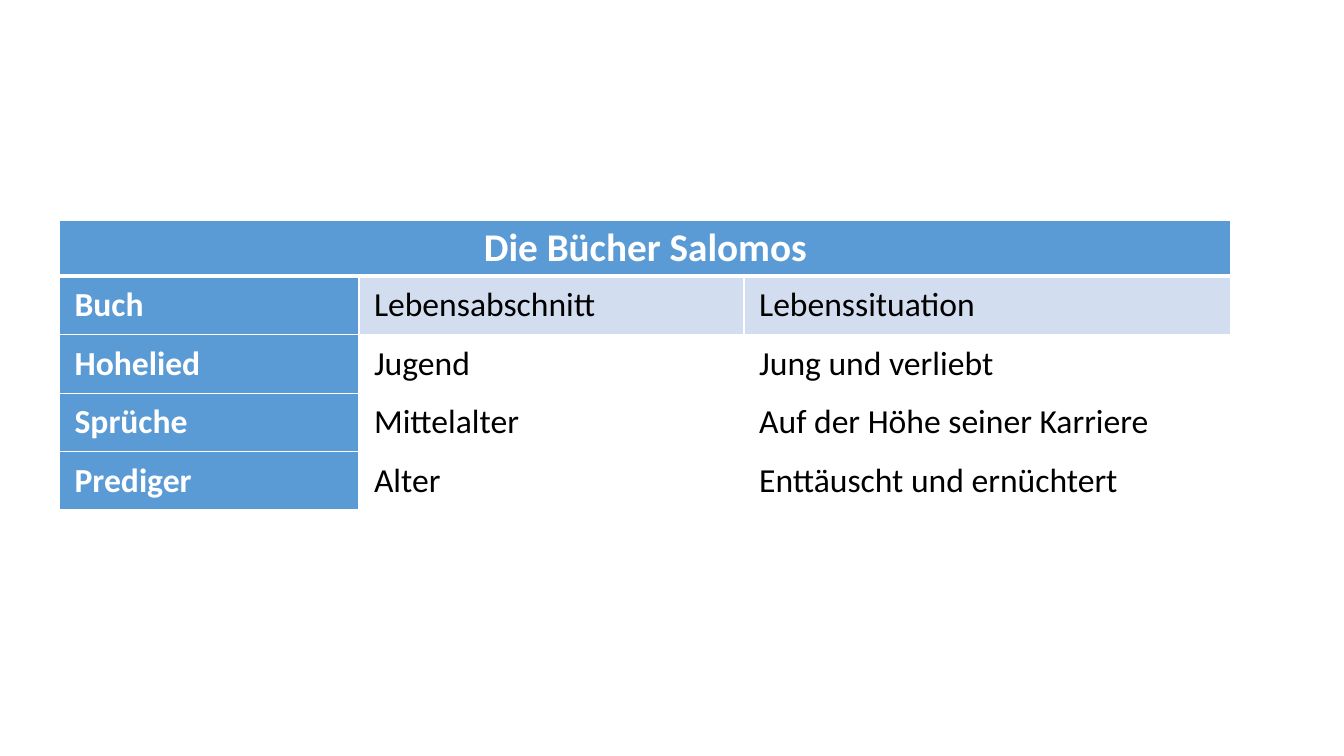
from lxml import etree
from pptx import Presentation
from pptx.dml.color import RGBColor
from pptx.enum.text import MSO_ANCHOR, PP_ALIGN
from pptx.oxml.ns import qn
from pptx.util import Inches, Pt

MIDDLE = MSO_ANCHOR.MIDDLE
LEFT, CENTER = PP_ALIGN.LEFT, PP_ALIGN.CENTER
BLUE, PALE, WHITE, BLACK = "5B9BD5", "D2DEEF", "FFFFFF", "000000"
TITLE = "Die Bücher Salomos"
BOOKS = [
    ("Buch", "Lebensabschnitt", "Lebenssituation"),
    ("Hohelied", "Jugend", "Jung und verliebt"),
    ("Sprüche", "Mittelalter", "Auf der Höhe seiner Karriere"),
    ("Prediger", "Alter", "Enttäuscht und ernüchtert"),
]
WIDTHS = [2.97, 3.82, 4.83]
HEIGHTS = [0.55] + [0.58] * len(BOOKS)


def color(code):
    """Turn a hex string into a colour."""
    return RGBColor.from_string(code)


class Deck:
    """Hold the style and the current slide."""

    def __init__(self):
        """Open a wide deck with one blank slide."""
        self.font = "Calibri"
        self.file = Presentation()
        self.file.slide_width = Inches(13.33)
        self.file.slide_height = Inches(7.5)
        self.slide = self.file.slides.add_slide(self.file.slide_layouts[6])

    def table(self, left, top, widths, heights):
        """Add an empty table with the given columns and rows."""
        frame = self.slide.shapes.add_table(
            len(heights), len(widths), Inches(left), Inches(top),
            Inches(sum(widths)), Inches(sum(heights)))
        grid = frame.table
        grid.horz_banding = False
        grid.first_col = True
        for column, width in zip(grid.columns, widths):
            column.width = Inches(width)
        for row, height in zip(grid.rows, heights):
            row.height = Inches(height)
        return grid

    def border(self, cell, **sides):
        """Draw white cell borders with the given point widths."""
        props = cell._tc.get_or_add_tcPr()
        for spot, side in enumerate("LRTB"):
            line = etree.Element(qn(f"a:ln{side}"), w=str(Pt(sides.get(side, 1))))
            fill = etree.SubElement(line, qn("a:solidFill"))
            etree.SubElement(fill, qn("a:srgbClr"), val=WHITE)
            props.insert(spot, line)

    def paint(self, cell, fill):
        """Fill a cell, or leave it clear."""
        if fill:
            cell.fill.solid()
            cell.fill.fore_color.rgb = color(fill)
        else:
            cell.fill.background()

    def label(self, cell, text, size, ink, bold, align=LEFT):
        """Set the text of a cell and its format."""
        cell.vertical_anchor = MIDDLE
        cell.margin_left = cell.margin_right = Inches(0.15)
        cell.margin_top = cell.margin_bottom = 0
        cell.text = text
        line = cell.text_frame.paragraphs[0]
        line.alignment = align
        line.font.name = self.font
        line.font.size = Pt(size)
        line.font.bold = bold
        line.font.color.rgb = color(ink)


def main():
    """Build the slide and save it."""
    deck = Deck()
    grid = deck.table(0.59, 2.19, WIDTHS, HEIGHTS)
    head = grid.cell(0, 0)
    head.merge(grid.cell(0, len(WIDTHS) - 1))
    deck.label(head, TITLE, 28, WHITE, True, CENTER)
    for col in range(len(WIDTHS)):
        deck.paint(grid.cell(0, col), BLUE)
        deck.border(grid.cell(0, col), B=3)
    for row, book in enumerate(BOOKS, 1):
        for col, text in enumerate(book):
            cell = grid.cell(row, col)
            first = col == 0
            deck.label(cell, text, 24, WHITE if first else BLACK, first)
            deck.paint(cell, BLUE if first else PALE if row == 1 else None)
            deck.border(cell, T=3 if row == 1 else 1)
    deck.file.save("out.pptx")


if __name__ == "__main__":
    main()
